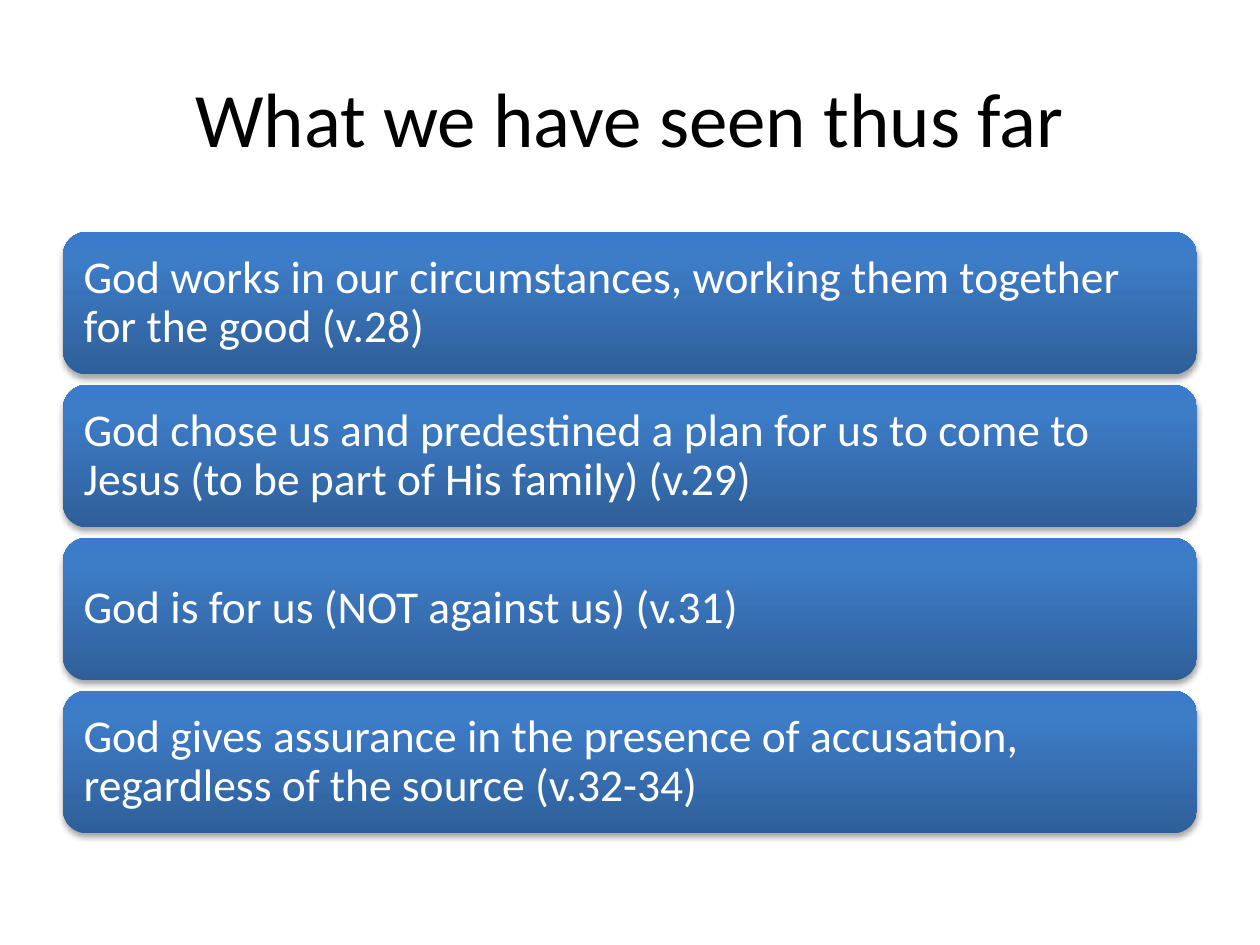
from copy import deepcopy

from lxml.etree import SubElement
from pptx import Presentation
from pptx.dml.color import RGBColor
from pptx.enum.shapes import MSO_SHAPE
from pptx.enum.text import MSO_ANCHOR, PP_ALIGN
from pptx.oxml.ns import qn
from pptx.util import Pt

POINTS = [
    "God works in our circumstances, working them together for the good (v.28)",
    "God chose us and predestined a plan for us to come to Jesus (to be part of His family) (v.29)",
    "God is for us (NOT against us) (v.31)",
    "God gives assurance in the presence of accusation, regardless of the source (v.32-34)",
]
BAR_STOPS = [(0, "2F5F99"), (0.8, "3D7CC7"), (1, "3A7CCB")]
LEFT, WIDTH = 36, 648
BAR_TOP, BAR_HEIGHT, BAR_GAP = 132.6, 81.4, 6
BAR_FRAME = {
    "word_wrap": True,
    "vertical_anchor": MSO_ANCHOR.MIDDLE,
    "margin_left": Pt(7.8),
    "margin_right": Pt(7.8),
    "margin_top": Pt(7.8),
    "margin_bottom": Pt(7.8),
}
BAR_PARAGRAPH = {"alignment": PP_ALIGN.LEFT, "line_spacing": 0.9}
TITLE_FRAME = {"word_wrap": True, "vertical_anchor": MSO_ANCHOR.MIDDLE}
TITLE_PARAGRAPH = {"alignment": PP_ALIGN.CENTER}


def color(value):
    """Turn a hex string into a colour."""
    return RGBColor.from_string(value)


def apply(target, formats):
    """Set every attribute given in a dict of format values."""
    for name, value in formats.items():
        setattr(target, name, value)


def write(shape, wording, size, ink, frame_format, paragraph_format):
    """Fill a shape with one formatted paragraph."""
    frame = shape.text_frame
    apply(frame, frame_format)
    paragraph = frame.paragraphs[0]
    apply(paragraph, paragraph_format)
    run = paragraph.add_run()
    run.text = wording
    apply(run.font, {"name": "Calibri", "size": Pt(size)})
    run.font.color.rgb = color(ink)


def shade(bar):
    """Give a bar its upward three-stop gradient."""
    bar.fill.gradient()
    bar.fill.gradient_angle = 90
    stop_list = next(bar._element.spPr.iter(qn("a:gsLst")))
    stop_list.append(deepcopy(stop_list[-1]))
    for stop, (position, value) in zip(bar.fill.gradient_stops, BAR_STOPS):
        stop.position = position
        stop.color.rgb = color(value)


def cast_shadow(bar):
    """Drop a soft black shadow straight below a bar."""
    bar.shadow.inherit = False
    effects = bar._element.spPr.find(qn("a:effectLst"))
    shadow = SubElement(
        effects, qn("a:outerShdw"), blurRad=str(Pt(3.1)), dist=str(Pt(1.8)),
        dir="5400000", rotWithShape="0",
    )
    black = SubElement(shadow, qn("a:srgbClr"), val="000000")
    SubElement(black, qn("a:alpha"), val="35000")


def add_title(slide, wording):
    """Place and format the slide title."""
    title = slide.shapes.title
    apply(title, {"left": Pt(LEFT), "top": Pt(21.6), "width": Pt(WIDTH), "height": Pt(90)})
    write(title, wording, 44, "000000", TITLE_FRAME, TITLE_PARAGRAPH)


def add_bar(slide, top, wording):
    """Add one rounded bar holding a point."""
    bar = slide.shapes.add_shape(
        MSO_SHAPE.ROUNDED_RECTANGLE, Pt(LEFT), Pt(top), Pt(WIDTH), Pt(BAR_HEIGHT)
    )
    shade(bar)
    bar.line.fill.background()
    cast_shadow(bar)
    write(bar, wording, 26, "FFFFFF", BAR_FRAME, BAR_PARAGRAPH)


def main():
    """Build and save the slide."""
    deck = Presentation()
    apply(deck, {"slide_width": Pt(720), "slide_height": Pt(540)})
    slide = deck.slides.add_slide(deck.slide_layouts[5])
    add_title(slide, "What we have seen thus far")
    for index, wording in enumerate(POINTS):
        add_bar(slide, BAR_TOP + index * (BAR_HEIGHT + BAR_GAP), wording)
    deck.save("out.pptx")


if __name__ == "__main__":
    main()
